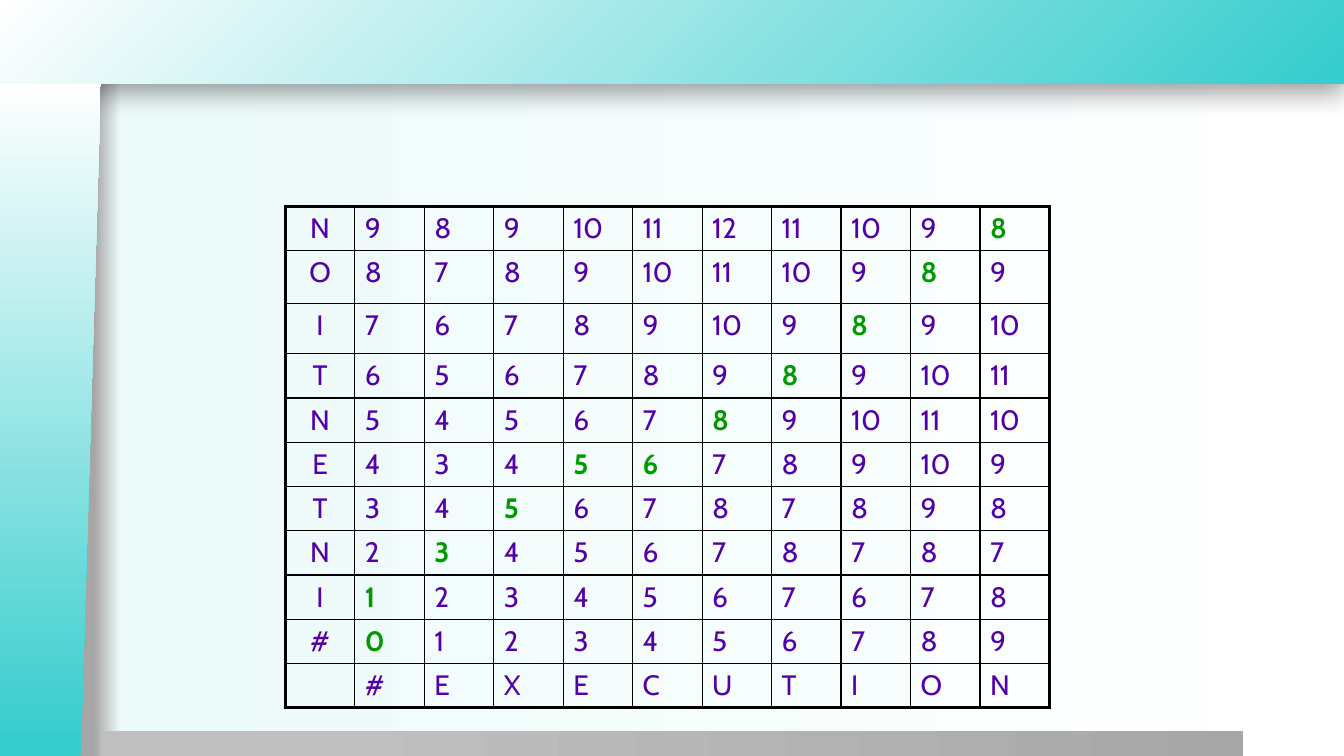
from dataclasses import dataclass

from lxml.etree import SubElement
from pptx import Presentation
from pptx.dml.color import RGBColor
from pptx.enum.shapes import MSO_SHAPE as Preset
from pptx.enum.text import PP_ALIGN as Align
from pptx.oxml.ns import qn
from pptx.util import Inches, Pt


@dataclass(frozen=True)
class Theme:
    font: str = "Cabin"
    size: int = 20
    ink: str = "5400A8"
    path_ink: str = "009900"
    border: str = "000000"
    teal: str = "34CCCC"
    white: str = "FFFFFF"
    mist: str = "EDFBFB"
    edge_gray: str = "A6A6A6"
    light_gray: str = "BFBFBF"
    dark_gray: str = "A7A7A7"
    thin: float = 1
    thick: float = 2.25


THEME = Theme()

# Distances from the last letter of INTENTION down to the start mark
DISTANCES = [
    ("N", [9, 8, 9, 10, 11, 12, 11, 10, 9, 8]),
    ("O", [8, 7, 8, 9, 10, 11, 10, 9, 8, 9]),
    ("I", [7, 6, 7, 8, 9, 10, 9, 8, 9, 10]),
    ("T", [6, 5, 6, 7, 8, 9, 8, 9, 10, 11]),
    ("N", [5, 4, 5, 6, 7, 8, 9, 10, 11, 10]),
    ("E", [4, 3, 4, 5, 6, 7, 8, 9, 10, 9]),
    ("T", [3, 4, 5, 6, 7, 8, 7, 8, 9, 8]),
    ("N", [2, 3, 4, 5, 6, 7, 8, 7, 8, 7]),
    ("I", [1, 2, 3, 4, 5, 6, 7, 6, 7, 8]),
    ("#", [0, 1, 2, 3, 4, 5, 6, 7, 8, 9]),
]
TARGET = "#EXECUTION"
# Columns on the cheapest path, by row
PATH = [{10}, {9}, {8}, {7}, {6}, {4, 5}, {3}, {2}, {1}, {1}, set()]
ROW_HEIGHTS = [0.43, 0.52, 0.5] + [0.43] * 8
TABLE_WIDTH = 7.58


def add_color(parent, color, opacity=100):
    node = SubElement(parent, qn("a:srgbClr"), val=color)
    if opacity < 100:
        SubElement(node, qn("a:alpha"), val=str(opacity * 1000))


def set_gradient(element, stops, from_corner=False):
    """Swap the element's solid fill for a gradient."""
    solid = next(element.iter(qn("a:solidFill")))
    gradient = SubElement(solid.getparent(), qn("a:gradFill"), rotWithShape="1")
    solid.getparent().replace(solid, gradient)
    stop_list = SubElement(gradient, qn("a:gsLst"))
    for position, color in stops:
        add_color(SubElement(stop_list, qn("a:gs"), pos=str(position * 1000)), color)
    if from_corner:
        circle = SubElement(gradient, qn("a:path"), path="circle")
        SubElement(circle, qn("a:fillToRect"), l="100000", t="100000")
    else:
        SubElement(gradient, qn("a:lin"), ang="0", scaled="0")


def add_panel(slide, preset, box, stops, from_corner=False):
    panel = slide.shapes.add_shape(preset, *map(Inches, box))
    panel.shadow.inherit = False
    panel.line.fill.background()
    panel.fill.solid()
    set_gradient(panel.element, stops, from_corner)
    return panel


def add_drop_shadow(panel, blur, distance, opacity):
    effects = panel.element.spPr.find(qn("a:effectLst"))
    shadow = SubElement(effects, qn("a:outerShdw"), blurRad=str(Pt(blur)),
                        dist=str(Pt(distance)), dir="5400000", algn="t",
                        rotWithShape="0")
    add_color(shadow, THEME.border, opacity)


def write_text(frame, text, color=THEME.ink, bold=False, align=Align.LEFT):
    paragraph = frame.paragraphs[0]
    paragraph.alignment = align
    before = SubElement(paragraph._p.get_or_add_pPr(), qn("a:spcBef"))
    SubElement(before, qn("a:spcPct"), val="20000")
    run = paragraph.add_run()
    run.text = text
    run.font.name = THEME.font
    run.font.size = Pt(THEME.size)
    run.font.bold = bold
    run.font.color.rgb = RGBColor.from_string(color)


def set_borders(cell, outer_sides):
    properties = cell._tc.get_or_add_tcPr()
    for side in "LRTB":
        width = THEME.thick if side in outer_sides else THEME.thin
        line = SubElement(properties, qn(f"a:ln{side}"), w=str(Pt(width)))
        add_color(SubElement(line, qn("a:solidFill")), THEME.border)


def add_distance_table(slide):
    rows = [[letter, *map(str, values)] for letter, values in DISTANCES]
    rows.append(["", *TARGET])
    last_row, last_column = len(rows) - 1, len(rows[0]) - 1
    table = slide.shapes.add_table(
        len(rows), len(rows[0]), Inches(2.83), Inches(2.05),
        Inches(TABLE_WIDTH), Inches(sum(ROW_HEIGHTS))).table
    table.first_row = table.horz_banding = False
    for column in table.columns:
        column.width = Inches(TABLE_WIDTH / len(rows[0]))
    for r, (row, height) in enumerate(zip(rows, ROW_HEIGHTS)):
        table.rows[r].height = Inches(height)
        for c, text in enumerate(row):
            cell = table.cell(r, c)
            edges = {"L": c == 0, "R": c == last_column,
                     "T": r == 0, "B": r == last_row}
            set_borders(cell, [side for side, outer in edges.items() if outer])
            cell.fill.background()
            if text:
                on_path = c in PATH[r]
                write_text(cell.text_frame, text, bold=on_path,
                           color=THEME.path_ink if on_path else THEME.ink,
                           align=Align.CENTER if c == 0 else Align.LEFT)


def add_backdrop(slide):
    slide.background.fill.solid()
    set_gradient(slide.element, [(0, THEME.edge_gray), (7, THEME.edge_gray),
                                 (9, THEME.mist), (100, THEME.white)])
    # Top band
    band = add_panel(slide, Preset.RECTANGLE, (-0.01, 0, 13.34, 0.83),
                     [(0, THEME.teal), (100, THEME.white)], from_corner=True)
    add_drop_shadow(band, blur=20, distance=6, opacity=40)
    # Bottom strip
    add_panel(slide, Preset.RECTANGLE, (1, 7.25, 11.33, 0.26),
              [(20, THEME.light_gray), (100, THEME.dark_gray)])
    # Slanted left panel
    side = add_panel(slide, Preset.FLOWCHART_MANUAL_INPUT, (-2.84, 3.67, 6.68, 1),
                     [(1, THEME.teal), (100, THEME.white)])
    side.rotation = 270
    side.element.spPr.xfrm.set("flipV", "1")


def main():
    deck = Presentation()
    deck.slide_width, deck.slide_height = Inches(13.33), Inches(7.5)
    slide = deck.slides.add_slide(deck.slide_layouts[6])
    add_backdrop(slide)
    add_distance_table(slide)
    deck.save("out.pptx")


if __name__ == "__main__":
    main()
